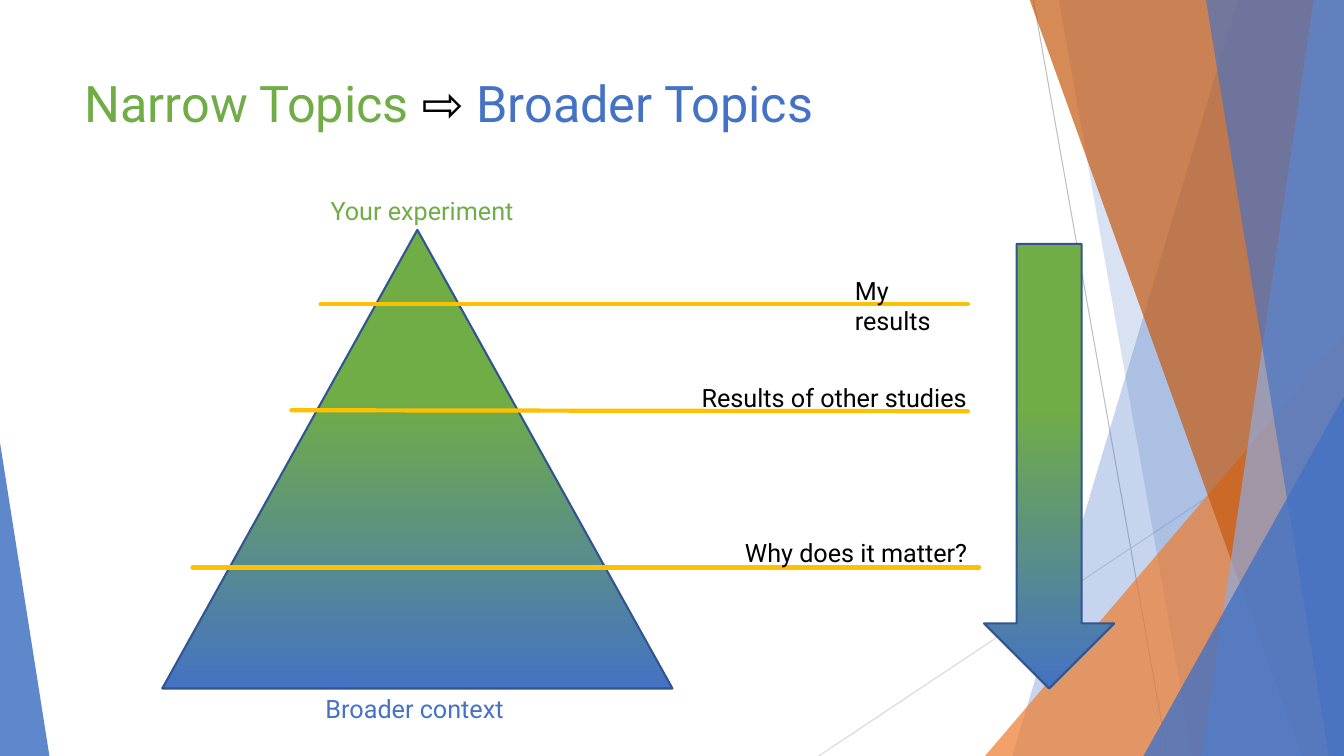
from dataclasses import dataclass

from lxml.etree import SubElement
from pptx import Presentation
from pptx.dml.color import RGBColor
from pptx.enum.shapes import MSO_CONNECTOR, MSO_SHAPE
from pptx.enum.text import MSO_ANCHOR
from pptx.oxml.ns import qn
from pptx.shapes.autoshape import Shape
from pptx.slide import Slide
from pptx.util import Inches, Pt

WIDTH, HEIGHT = 13.33, 7.5
TOP = -0.01
FONT = "Roboto"

BLACK = RGBColor(0x00, 0x00, 0x00)
GREEN = RGBColor(0x70, 0xAD, 0x47)
BLUE = RGBColor(0x44, 0x72, 0xC4)
LIGHT_BLUE = RGBColor(0x8F, 0xAA, 0xDC)
DARK_BLUE = RGBColor(0x32, 0x54, 0x91)
ORANGE = RGBColor(0xED, 0x7D, 0x31)
RUST = RGBColor(0xC5, 0x5A, 0x11)
GOLD = RGBColor(0xFF, 0xC0, 0x00)
GREY = RGBColor(0xBF, 0xBF, 0xBF)
PALE_GREY = RGBColor(0xD9, 0xD9, 0xD9)


@dataclass
class Band:
    """Facet from a slanted left edge to the right side of the page."""
    top_x: float
    bottom_x: float
    color: RGBColor
    opacity: int


@dataclass
class Corner:
    """Right triangle standing on the bottom of the page."""
    left: float
    top: float
    width: float
    apex: float
    color: RGBColor
    opacity: int


@dataclass
class Rule:
    start: tuple[float, float]
    end: tuple[float, float]
    color: RGBColor
    weight: float
    cap: str = "flat"


@dataclass
class Label:
    text: str
    left: float
    top: float
    width: float
    color: RGBColor = BLACK
    wrap: bool = False


@dataclass
class Gradient:
    kind: MSO_SHAPE
    left: float
    top: float
    width: float
    height: float


HAIRLINES = [
    Rule((10.25, 0), (11.58, HEIGHT), GREY, 0.75),
    Rule((WIDTH, 4.03), (8.12, HEIGHT), PALE_GREY, 0.75),
]
FACETS = [
    Band(12.28, 10.04, BLUE, 30),
    Band(10.5, 11.83, BLUE, 20),
    Corner(9.77, 3.33, 3.56, 1, ORANGE, 72),
    Band(10.21, 12.91, RUST, 70),
    Band(13.03, 11.92, LIGHT_BLUE, 70),
    Band(11.96, 13.18, BLUE, 65),
    Corner(11.34, 3.93, 1.99, 1, BLUE, 80),
    Corner(0, 4.39, 0.49, 0, BLUE, 85),
]
TITLE = [("Narrow Topics ", GREEN), ("⇨", BLACK), (" Broader Topics", BLUE)]
PYRAMID = Gradient(MSO_SHAPE.ISOSCELES_TRIANGLE, 1.61, 2.28, 5.06, 4.55)
ARROW = Gradient(MSO_SHAPE.DOWN_ARROW, 9.76, 2.42, 1.29, 4.41)
LEVELS = [
    Rule((3.18, 3.02), (9.6, 3.02), GOLD, 3, "rnd"),
    Rule((2.89, 4.07), (9.6, 4.08), GOLD, 3, "rnd"),
    Rule((1.91, 5.63), (9.71, 5.63), GOLD, 3, "rnd"),
]
LABELS = [
    Label("My results", 8.38, 2.68, 1.3, wrap=True),
    Label("Results of other studies", 6.86, 3.74, 2.85),
    Label("Why does it matter?", 7.29, 5.28, 2.47),
    Label("Your experiment", 3.18, 1.89, 2.06, GREEN),
    Label("Broader context", 3.13, 6.83, 2.03, BLUE),
]


def draw_rule(page: Slide, rule: Rule) -> None:
    points = [Inches(value) for value in (*rule.start, *rule.end)]
    connector = page.shapes.add_connector(MSO_CONNECTOR.STRAIGHT, *points)
    connector.line.color.rgb = rule.color
    connector.line.width = Pt(rule.weight)
    properties = connector._element.spPr
    properties.find(qn("a:ln")).set("cap", rule.cap)
    SubElement(properties, qn("a:effectLst"))


def draw_facet(page: Slide, facet: Band | Corner) -> None:
    if isinstance(facet, Band):
        outline = [(WIDTH, TOP), (WIDTH, HEIGHT), (facet.bottom_x, HEIGHT)]
        builder = page.shapes.build_freeform(
            Inches(facet.top_x), Inches(TOP))
        builder.add_line_segments([(Inches(x), Inches(y)) for x, y in outline])
        shape = builder.convert_to_shape()
    else:
        shape = page.shapes.add_shape(
            MSO_SHAPE.ISOSCELES_TRIANGLE, Inches(facet.left),
            Inches(facet.top), Inches(facet.width),
            Inches(HEIGHT - facet.top))
        shape.adjustments[0] = facet.apex
    shape.shadow.inherit = False
    shape.line.fill.background()
    shape.fill.solid()
    shape.fill.fore_color.rgb = facet.color
    color = shape._element.spPr.find(qn("a:solidFill"))[0]
    SubElement(color, qn("a:alpha")).set("val", str(facet.opacity * 1000))


def draw_gradient(page: Slide, item: Gradient) -> Shape:
    shape = page.shapes.add_shape(
        item.kind, Inches(item.left), Inches(item.top),
        Inches(item.width), Inches(item.height))
    shape.shadow.inherit = False
    shape.line.color.rgb = DARK_BLUE
    shape.line.width = Pt(1.5)
    shape.fill.gradient()
    shape.fill.gradient_angle = 270
    stops = [(0.37, GREEN), (1, BLUE)]
    for stop, (position, color) in zip(shape.fill.gradient_stops, stops):
        stop.position = position
        stop.color.rgb = color
    return shape


def draw_text(page: Slide, spans: list[tuple[str, RGBColor]], size: int,
              left: float, top: float, width: float, height: float,
              wrap: bool) -> None:
    box = page.shapes.add_textbox(
        Inches(left), Inches(top), Inches(width), Inches(height))
    frame = box.text_frame
    frame.word_wrap = wrap
    frame.vertical_anchor = MSO_ANCHOR.TOP
    para = frame.paragraphs[0]
    for text, color in spans:
        span = para.add_run()
        span.text = text
        span.font.name = FONT
        span.font.size = Pt(size)
        span.font.color.rgb = color


def main() -> None:
    deck = Presentation()
    deck.slide_width, deck.slide_height = Inches(WIDTH), Inches(HEIGHT)
    page = deck.slides.add_slide(deck.slide_layouts[6])

    # Faceted background
    for hairline in HAIRLINES:
        draw_rule(page, hairline)
    for facet in FACETS:
        draw_facet(page, facet)

    # Title
    draw_text(page, TITLE, 36, 0.74, 0.67, 9.4, 1.44, True)

    # Pyramid, its levels and the arrow
    draw_gradient(page, PYRAMID)
    for level in LEVELS:
        draw_rule(page, level)
    draw_gradient(page, ARROW)

    # Labels
    for label in LABELS:
        draw_text(page, [(label.text, label.color)], 18, label.left,
                  label.top, label.width, 0.4, label.wrap)

    deck.save("out.pptx")


if __name__ == "__main__":
    main()
